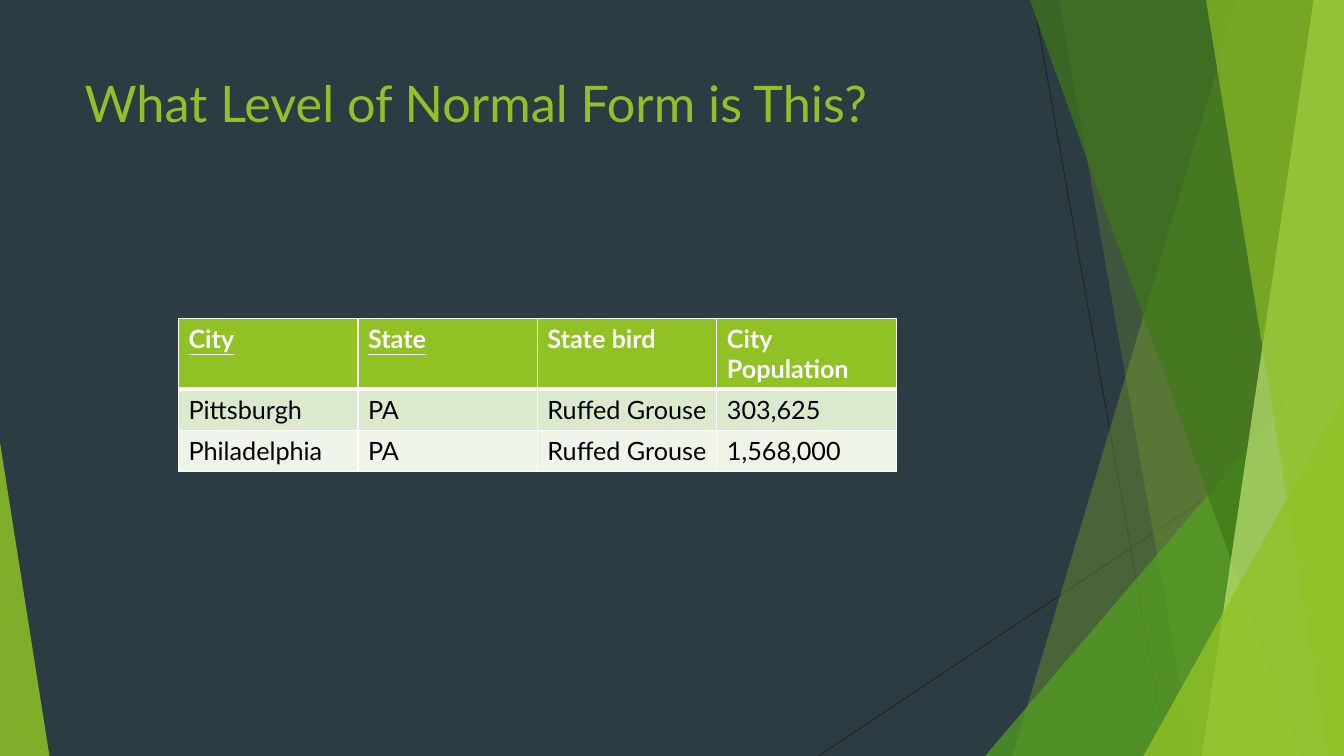
from lxml.etree import SubElement as Sub
from pptx import Presentation
from pptx.dml.color import RGBColor as RGB
from pptx.enum.shapes import MSO_CONNECTOR as Conn, MSO_SHAPE as Kind
from pptx.enum.text import MSO_ANCHOR as Anchor
from pptx.oxml.ns import qn
from pptx.util import Pt

PX = 9144  # 100 px to the inch
WIDE, HIGH = 1333, 750
FONT = "Lato"
SLATE = RGB(0x2C, 0x3C, 0x43)
INK = RGB(0x26, 0x26, 0x26)
LIME = RGB(0x90, 0xC2, 0x26)
GREEN = RGB(0x54, 0xA0, 0x21)
MOSS = RGB(0x3F, 0x78, 0x19)
PALE = RGB(0xC0, 0xE4, 0x74)
MINT = RGB(0xDB, 0xE9, 0xCD)
MIST = RGB(0xEE, 0xF4, 0xE8)
WHITE = RGB(0xFF, 0xFF, 0xFF)
BLACK = RGB(0, 0, 0)

deck = Presentation()
deck.slide_width, deck.slide_height = WIDE * PX, HIGH * PX
slide = deck.slides.add_slide(deck.slide_layouts[6])
slide.background.fill.solid()
slide.background.fill.fore_color.rgb = SLATE
shapes = slide.shapes


def paint(shape, color, alpha):
    shape.shadow.inherit = False
    shape.line.fill.background()
    shape.fill.solid()
    shape.fill.fore_color.rgb = color
    tone = shape.fill._xPr.find(qn("a:solidFill"))[0]
    Sub(tone, qn("a:alpha"), val=str(alpha * 1000))


def edge(cell, side, width):
    line = Sub(cell._tc.get_or_add_tcPr(), qn("a:ln" + side), w=str(Pt(width)))
    fill = Sub(line, qn("a:solidFill"))
    Sub(fill, qn("a:srgbClr"), val=str(WHITE))


# Thin lines behind the shards
for x1, y1, x2, y2 in [(1025, 0, 1158, HIGH), (WIDE, 403, 812, HIGH)]:
    line = shapes.add_connector(Conn.STRAIGHT, x1 * PX, y1 * PX, x2 * PX, y2 * PX)
    line.line.color.rgb = INK
    line.line.width = Pt(0.75)
    Sub(line._element.spPr, qn("a:effectLst"))

# Shards, back to front: a band runs from its top x to its bottom x and out to
# the right edge; a wedge is a right triangle on the bottom edge
shards = [
    ("band", 1228, 1004, LIME, 30),
    ("band", 1050, 1183, LIME, 20),
    ("wedge", (977, 333, 356), 1, GREEN, 72),
    ("band", 1021, 1291, MOSS, 70),
    ("band", 1303, 1192, PALE, 70),
    ("band", 1196, 1318, LIME, 65),
    ("wedge", (1134, 393, 199), 1, LIME, 80),
    ("wedge", (0, 439, 49), 0, LIME, 85),
]
for kind, a, b, color, alpha in shards:
    if kind == "band":
        pen = shapes.build_freeform(a, -1, PX)
        pen.add_line_segments([(WIDE, -1), (WIDE, HIGH), (b, HIGH)])
        shard = pen.convert_to_shape()
    else:
        x, y, w = a
        shard = shapes.add_shape(Kind.ISOSCELES_TRIANGLE, x * PX, y * PX,
                                 w * PX, (HIGH - y) * PX)
        shard.adjustments[0] = b
    paint(shard, color, alpha)

# Title
frame = shapes.add_textbox(74 * PX, 67 * PX, 940 * PX, 144 * PX).text_frame
frame.word_wrap = True
frame.vertical_anchor = Anchor.TOP
title = frame.paragraphs[0]
title.text = "What Level of Normal Form is This?"
title.font.name, title.font.size = FONT, Pt(36)
title.font.color.rgb = LIME

# Table of cities
rows = [
    ("City", "State", "State bird", "City Population"),
    ("Pittsburgh", "PA", "Ruffed Grouse", "303,625"),
    ("Philadelphia", "PA", "Ruffed Grouse", "1,568,000"),
]
fills = [LIME, MINT, MIST]
tall = [69, 41, 41]
keys = ("City", "State")
table = shapes.add_table(3, 4, 177 * PX, 316 * PX, 712 * PX, sum(tall) * PX).table
for col in table.columns:
    col.width = 178 * PX
for r, row in enumerate(rows):
    table.rows[r].height = tall[r] * PX
    head = r == 0
    for c, text in enumerate(row):
        cell = table.cell(r, c)
        for side in "LRTB":
            thick = (r, side) in [(0, "B"), (1, "T")]
            edge(cell, side, 3 if thick else 1)
        cell.fill.solid()
        cell.fill.fore_color.rgb = fills[r]
        cell.text = text
        font = cell.text_frame.paragraphs[0].font
        font.name, font.size, font.bold = FONT, Pt(18), head
        font.underline = head and text in keys
        font.color.rgb = WHITE if head else BLACK

deck.save("out.pptx")
